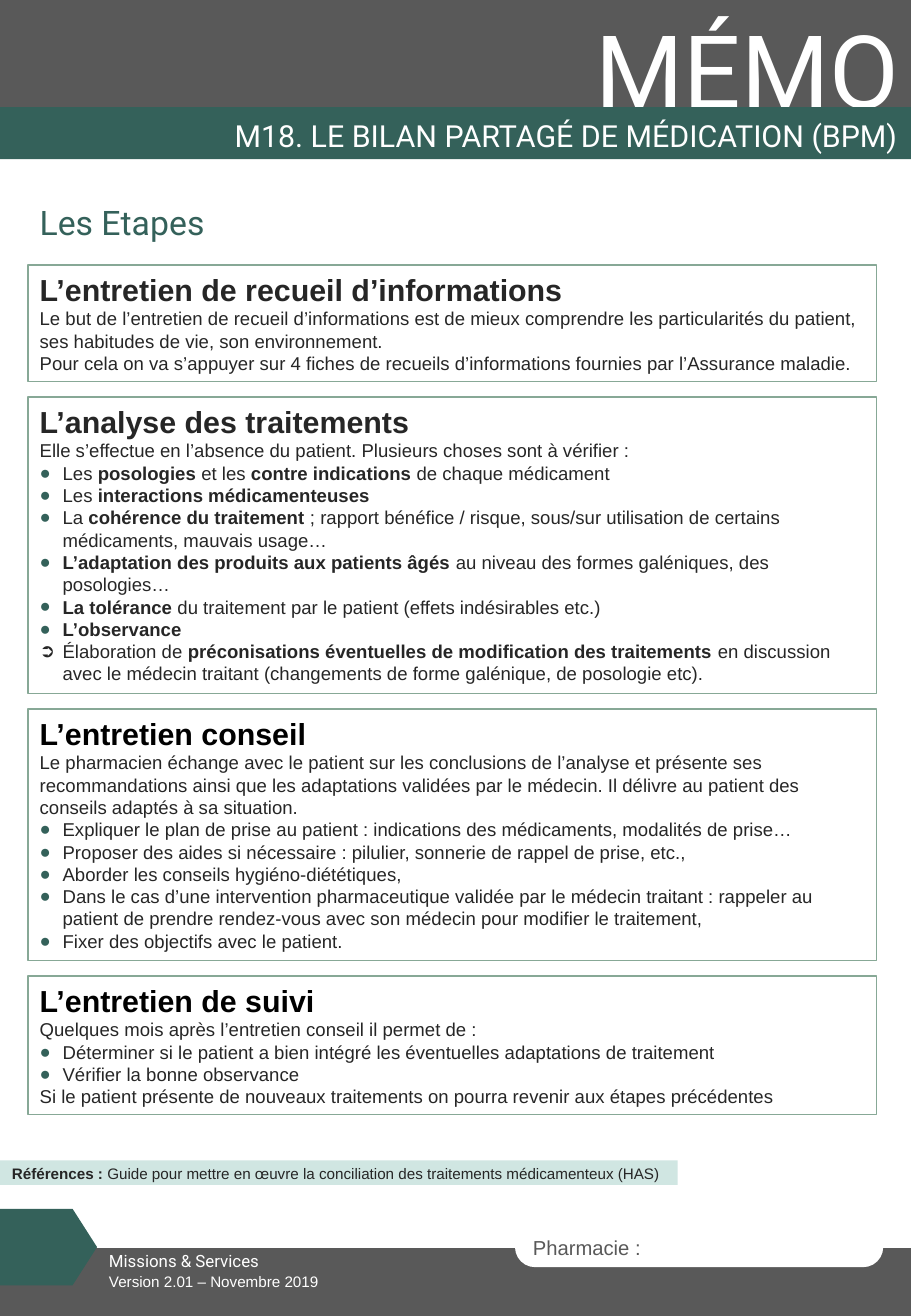
from lxml import etree
from pptx import Presentation
from pptx.dml.color import RGBColor
from pptx.enum.shapes import MSO_SHAPE
from pptx.enum.text import MSO_ANCHOR, PP_ALIGN
from pptx.oxml.ns import qn
from pptx.util import Cm, Pt

RECT, ROUND, ARROW = MSO_SHAPE.RECTANGLE, MSO_SHAPE.ROUNDED_RECTANGLE, MSO_SHAPE.PENTAGON
TOP, MID = MSO_ANCHOR.TOP, MSO_ANCHOR.MIDDLE
LEFT, RIGHT = PP_ALIGN.LEFT, PP_ALIGN.RIGHT
GREEN, GREY, WHITE, INK, BLACK = "34615A", "595959", "FFFFFF", "262626", "000000"
EDGE, PALE = "87A896", "D0E6E2"
WIDE, HIGH = 19.05, 27.51

# Paragraphs: "● " and "➲ " start a list item, ** surrounds bold words.
STEPS = [
    ("L’entretien de recueil d’informations", INK, 2.44, [
        "Le but de l’entretien de recueil d’informations est de mieux comprendre les "
        "particularités du patient, ses habitudes de vie, son environnement.",
        "Pour cela on va s’appuyer sur 4 fiches de recueils d’informations fournies par "
        "l’Assurance maladie.",
    ]),
    ("L’analyse des traitements", INK, 6.2, [
        "Elle s’effectue en l’absence du patient. Plusieurs choses sont à vérifier :",
        "● Les **posologies** et les **contre indications **de chaque médicament",
        "● Les **interactions médicamenteuses**",
        "● La **cohérence du traitement **; rapport bénéfice / risque, sous/sur utilisation "
        "de certains médicaments, mauvais usage…",
        "● **L’adaptation des produits aux patients âgés** au niveau des formes galéniques, "
        "des posologies…",
        "● **La tolérance** du traitement par le patient (effets indésirables etc.)",
        "● **L’observance**",
        "➲ Élaboration de **préconisations éventuelles de modification des traitements **"
        "en discussion avec le médecin traitant (changements de forme galénique, de "
        "posologie etc).",
    ]),
    ("L’entretien conseil", BLACK, 5.26, [
        "Le pharmacien échange avec le patient sur les conclusions de l’analyse et présente "
        "ses recommandations ainsi que les adaptations validées par le médecin. Il délivre "
        "au patient des conseils adaptés à sa situation.",
        "● Expliquer le plan de prise au patient : indications des médicaments, modalités "
        "de prise…",
        "● Proposer des aides si nécessaire : pilulier, sonnerie de rappel de prise, etc.,",
        "● Aborder les conseils hygiéno-diététiques,",
        "● Dans le cas d’une intervention pharmaceutique validée par le médecin traitant : "
        "rappeler au patient de prendre rendez-vous avec son médecin pour modifier le "
        "traitement,",
        "● Fixer des objectifs avec le patient.",
    ]),
    ("L’entretien de suivi", BLACK, 2.9, [
        "Quelques mois après l’entretien conseil il permet de :",
        "● Déterminer si le patient a bien intégré les éventuelles adaptations de traitement",
        "● Vérifier la bonne observance",
        "Si le patient présente de nouveaux traitements on pourra revenir aux étapes "
        "précédentes",
    ]),
]
STEP_X, STEP_Y, STEP_W, GAP = 0.58, 5.54, 17.75, 0.32

# Shape, place, fill, adjustment, text, text format; from back to front.
PARTS = [
    (RECT, (0, 0, WIDE, 2.24), GREY, None, "", {}),
    (None, (11.76, 0.03, 7.29, 2.82), None, None, "MÉMO",
     dict(size=60, name="Roboto", align=RIGHT)),
    (RECT, (0, 2.24, WIDE, 1.09), GREEN, None, "", {}),
    (RECT, (0, 26.09, WIDE, 1.42), GREY, None, "", {}),
    (ROUND, (10.77, 25.65, 7.7, 0.84), WHITE, 0.5, "Pharmacie :",
     dict(size=12, color=GREY, anchor=MID)),
    (ARROW, (0, 25.27, 2.03, 1.6), GREEN, 0.32, "", {}),
    (None, (2.03, 26.01, 4.88, 0.69), None, None, "Missions & Services",
     dict(size=10, name="Roboto")),
    (None, (2.03, 26.47, 14.94, 0.64), None, None, "Version 2.01 – Novembre 2019",
     dict(size=9)),
    (None, (0.58, 2.41, 18.44, 0.94), None, None,
     "M18. LE BILAN PARTAGÉ DE MÉDICATION (BPM)",
     dict(size=18, name="Roboto", align=RIGHT, anchor=MID, space=0.9)),
    (None, (0.58, 4.09, 16.56, 1.12), None, None, "Les Etapes",
     dict(size=20, name="Roboto", color=GREEN, anchor=MID)),
    (RECT, (0, 24.26, 14.17, 0.51), PALE, None,
     "**Références : **Guide pour mettre en œuvre la conciliation des traitements "
     "médicamenteux (HAS)", dict(size=9, color=INK, space=0.9)),
]


def rgb(code):
    return RGBColor.from_string(code)


def add_bullet(para, mark):
    props = para._p.get_or_add_pPr()
    props.set("marL", str(Cm(0.48)))
    props.set("indent", str(-Cm(0.48)))
    if mark == "●":
        tint = etree.SubElement(props, qn("a:buClr"))
        etree.SubElement(tint, qn("a:srgbClr"), val=GREEN)
    etree.SubElement(props, qn("a:buFont"), typeface="Arial")
    etree.SubElement(props, qn("a:buChar"), char=mark)


def write(para, text, size, name="Arial", color=WHITE, align=LEFT, space=None, bold=False):
    if text[:2] in ("● ", "➲ "):
        add_bullet(para, text[0])
        text = text[2:]
    para.alignment = align
    if space:
        para.line_spacing = space
    for i, part in enumerate(text.split("**")):
        if part:
            run = para.add_run()
            run.text = part
            look = dict(size=Pt(size), name=name, bold=bold or i % 2 == 1)
            for key, value in look.items():
                setattr(run.font, key, value)
            run.font.color.rgb = rgb(color)


def add_part(slide, kind, place, fill=None, adjust=None, edge=None, anchor=TOP):
    """Add a shape, or a text box when kind is None, and return its text frame."""
    place = [Cm(v) for v in place]
    if kind is None:
        shape = slide.shapes.add_textbox(*place)
    else:
        shape = slide.shapes.add_shape(kind, *place)
        shape.shadow.inherit = False
        if adjust is not None:
            shape.adjustments[0] = adjust
        if fill:
            shape.fill.solid()
            shape.fill.fore_color.rgb = rgb(fill)
        else:
            shape.fill.background()
        if edge:
            shape.line.color.rgb = rgb(edge)
            shape.line.width = Pt(1)
        else:
            shape.line.fill.background()
    frame = shape.text_frame
    frame.word_wrap = True
    frame.vertical_anchor = anchor
    return frame


def main():
    deck = Presentation()
    deck.slide_width, deck.slide_height = Cm(WIDE), Cm(HIGH)
    slide = deck.slides.add_slide(deck.slide_layouts[6])

    for kind, place, fill, adjust, text, look in PARTS:
        look = dict(look)
        frame = add_part(slide, kind, place, fill, adjust, anchor=look.pop("anchor", TOP))
        if text:
            write(frame.paragraphs[0], text, **look)

    y = STEP_Y
    for head, color, high, lines in STEPS:
        frame = add_part(slide, RECT, (STEP_X, y, STEP_W, high), edge=EDGE)
        write(frame.paragraphs[0], head, 18, color=color, bold=True)
        for line in lines:
            write(frame.add_paragraph(), line, 11, color=INK)
        y += high + GAP

    deck.save("out.pptx")


if __name__ == "__main__":
    main()
